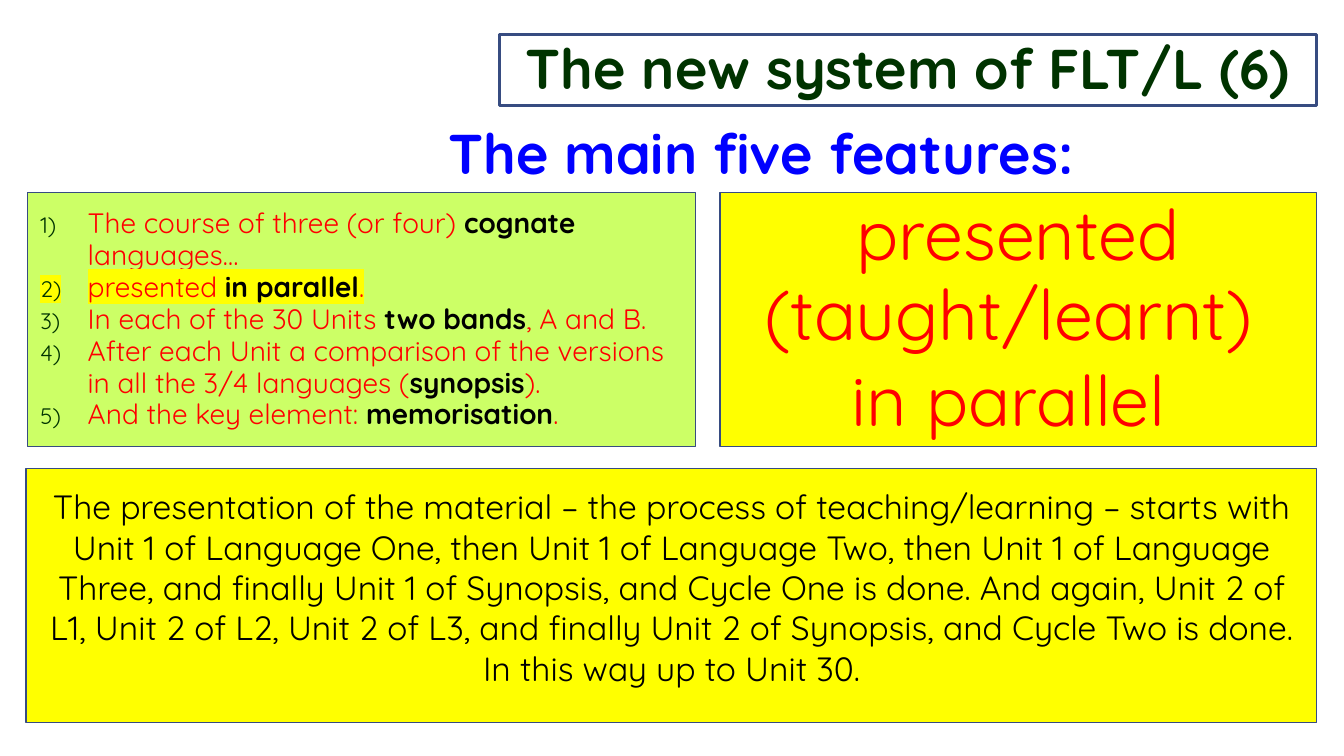
from dataclasses import dataclass

from lxml import etree
from pptx import Presentation
from pptx.dml.color import RGBColor
from pptx.enum.shapes import MSO_SHAPE
from pptx.enum.text import MSO_ANCHOR, MSO_AUTO_SIZE, PP_ALIGN
from pptx.oxml.ns import qn
from pptx.util import Inches, Pt

RECT = MSO_SHAPE.RECTANGLE
MIDDLE = MSO_ANCHOR.MIDDLE
NO_FIT = MSO_AUTO_SIZE.NONE
LEFT, CENTER = PP_ALIGN.LEFT, PP_ALIGN.CENTER


@dataclass(frozen=True)
class Theme:
    face: str = "Quicksand"
    black: str = "000000"
    green: str = "003300"
    blue: str = "0000FF"
    red: str = "FF0000"
    lime: str = "CCFF66"
    yellow: str = "FFFF00"
    edge: str = "374C81"
    head: int = 40
    list: int = 20
    claim: int = 50
    note: int = 24


THEME = Theme()

FEATURES = [
    ("The course of three (or four) ", "cognate ", "languages…"),
    ("presented ", "in parallel", "."),
    ("In each of the 30 Units ", "two bands", ", A and B."),
    ("After each Unit a comparison of the versions in all the 3/4 languages (",
     "synopsis", ")."),
    ("And the key element: ", "memorisation", "."),
]
MARKED = 1
CLAIM = ["presented (taught/learnt) ", "in parallel "]
NOTE = (
    "The presentation of the material – the process of teaching/learning – "
    "starts with Unit 1 of Language One, then Unit 1 of Language Two, then "
    "Unit 1 of Language Three, and finally Unit 1 of Synopsis, and Cycle One "
    "is done. And again, Unit 2 of L1, Unit 2 of L2, Unit 2 of L3, and finally "
    "Unit 2 of Synopsis, and Cycle Two is done. In this way up to Unit 30."
)


def place(shape, left, top, width, height):
    shape.left, shape.top = Inches(left), Inches(top)
    shape.width, shape.height = Inches(width), Inches(height)


def frame(shape):
    text = shape.text_frame
    text.word_wrap = True
    text.auto_size = NO_FIT
    text.vertical_anchor = MIDDLE
    text.margin_left = text.margin_right = Inches(0.13)
    text.margin_top = text.margin_bottom = Inches(0.07)
    return text


def outline(shape, width, fill=None):
    if fill:
        shape.fill.solid()
        shape.fill.fore_color.rgb = RGBColor.from_string(fill)
    shape.line.color.rgb = RGBColor.from_string(THEME.edge)
    shape.line.width = Pt(width)


def style(run, size, color, bold=False):
    font = run.font
    font.name, font.size, font.bold = THEME.face, Pt(size), bold
    font.color.rgb = RGBColor.from_string(color)


def space(para, align, lines):
    para.alignment = align
    para.line_spacing = lines
    para.space_before = para.space_after = Pt(0)


def write(shape, lines, size, color, bold=False, align=CENTER, pitch=0.95):
    text = frame(shape)
    text.text = "\n".join(lines)
    for para in text.paragraphs:
        space(para, align, pitch)
        for run in para.runs:
            style(run, size, color, bold)
    return text


def number(para):
    props = para._p.get_or_add_pPr()
    props.set("marL", str(Inches(0.47)))
    props.set("indent", str(-Inches(0.47)))
    tint = etree.SubElement(props, qn("a:buClr"))
    etree.SubElement(tint, qn("a:srgbClr"), val=THEME.green)
    etree.SubElement(props, qn("a:buSzPct"), val="80000")
    etree.SubElement(props, qn("a:buFont"), typeface=THEME.face)
    etree.SubElement(props, qn("a:buAutoNum"), type="arabicParenR")


def mark(run):
    fill = run._r.get_or_add_rPr().find(qn("a:solidFill"))
    light = etree.Element(qn("a:highlight"))
    etree.SubElement(light, qn("a:srgbClr"), val=THEME.yellow)
    fill.addnext(light)


def fill_list(shape):
    text = frame(shape)
    for row, parts in enumerate(FEATURES):
        para = text.add_paragraph() if row else text.paragraphs[0]
        space(para, LEFT, 0.95)
        number(para)
        for col, part in enumerate(parts):
            run = para.add_run()
            run.text = part
            key = col == 1
            style(run, THEME.list, THEME.black if key else THEME.red, key)
            if row == MARKED:
                mark(run)


def panel(slide, box, fill):
    shape = slide.shapes.add_shape(RECT, *map(Inches, box))
    shape.shadow.inherit = False
    outline(shape, 1, fill)
    return shape


def main():
    deck = Presentation()
    deck.slide_width, deck.slide_height = Inches(13.33), Inches(7.5)
    slide = deck.slides.add_slide(deck.slide_layouts[1])

    title, body = slide.shapes.title, slide.placeholders[1]
    place(title, 4.95, 0.34, 8.11, 0.71)
    outline(title, 2.25)
    write(title, ["The new system of FLT/L (6)"], THEME.head, THEME.green, True)

    label = slide.shapes.add_textbox(*map(Inches, (4.32, 1.07, 8.74, 0.94)))
    write(label, ["The main five features:"], THEME.head, THEME.blue, True, LEFT)

    place(body, 0.27, 1.91, 6.63, 2.52)
    outline(body, 1, THEME.lime)
    fill_list(body)

    claim = panel(slide, (7.14, 1.91, 5.92, 2.52), THEME.yellow)
    text = write(claim, CLAIM, THEME.claim, THEME.red)
    text.paragraphs[1].space_before = Pt(4)

    note = panel(slide, (0.26, 4.65, 12.8, 2.52), THEME.yellow)
    text = write(note, [NOTE], THEME.note, THEME.black, pitch=1.0)
    text.margin_bottom = Inches(0.24)

    deck.save("out.pptx")


if __name__ == "__main__":
    main()
